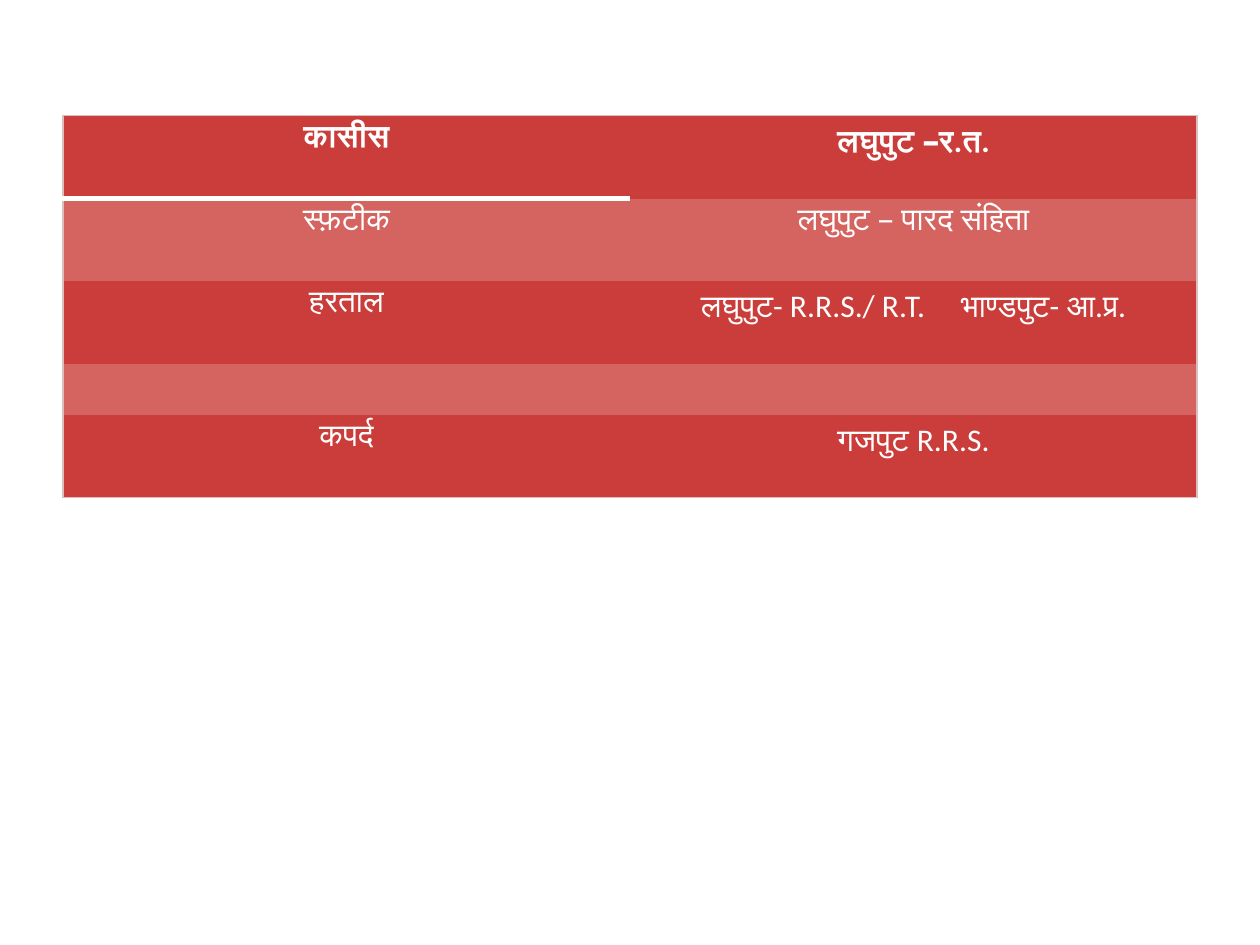
from lxml import etree
from pptx import Presentation
from pptx.dml.color import RGBColor
from pptx.enum import text as t
from pptx.oxml import ns
from pptx.util import Pt

ROWS = [
    (["कासीस"], ["लघुपुट –र.त."]),
    (["स्फ़टीक"], ["लघुपुट – पारद संहिता"]),
    (["हरताल"], ["लघुपुट- R.R.S./ R.T.", "भाण्डपुट- आ.प्र."]),
    ([], []),
    (["कपर्द"], ["गजपुट R.R.S."]),
]
HEX = {"dark": "CB3D3A", "light": "D5635F", "edge": "DEBDBD", "white": "FFFFFF"}
LEFT, TOP, COL = 36, 66.24, 324
TALL, SHORT = 47.2, 29.2
GAP = 16.3
NO_STYLE = "{2D5ABB26-0587-4C30-8999-92F81FD0307C}"


def add_text(para, words, size=18, bold=False, color="white", font="Calibri"):
    """Write the parts in one centred line, parted by a widened space."""
    para.alignment = t.PP_ALIGN.CENTER
    para.font.size = Pt(size)
    for i, word in enumerate(words):
        for part in ([" ", word] if i else [word]):
            run = para.add_run()
            run.text = part
            run.font.name = font
            run.font.size = Pt(size)
            run.font.bold = bold
            run.font.color.rgb = RGBColor.from_string(HEX[color])
            if part == " ":
                run.font._element.set("spc", str(round(GAP * 100)))


def add_edges(cell, edges):
    """Draw cell borders; edges maps L, R, T or B to (colour, width)."""
    props = cell._tc.get_or_add_tcPr()
    sides = [s for s in "LRTB" if s in edges]
    for i, side in enumerate(sides):
        color, width = edges[side]
        line = etree.Element(ns.qn("a:ln" + side), w=str(Pt(width)))
        fill = etree.SubElement(line, ns.qn("a:solidFill"))
        etree.SubElement(fill, ns.qn("a:srgbClr"), val=HEX[color])
        props.insert(i, line)


def main():
    deck = Presentation()
    deck.slide_width, deck.slide_height = Pt(720), Pt(540)
    slide = deck.slides.add_slide(deck.slide_layouts[6])

    highs = [TALL if any(row) else SHORT for row in ROWS]
    frame = slide.shapes.add_table(len(ROWS), 2, Pt(LEFT), Pt(TOP),
                                   Pt(2 * COL), Pt(sum(highs)))
    table = frame.table
    table.first_row = table.horz_banding = False
    table._tbl.tblPr.find(ns.qn("a:tableStyleId")).text = NO_STYLE
    for col in table.columns:
        col.width = Pt(COL)

    thin = ("edge", 0.75)
    last = len(ROWS) - 1
    for r, row in enumerate(ROWS):
        table.rows[r].height = Pt(highs[r])
        for c, words in enumerate(row):
            cell = table.cell(r, c)
            cell.fill.solid()
            shade = HEX["light" if r % 2 else "dark"]
            cell.fill.fore_color.rgb = RGBColor.from_string(shade)
            add_text(cell.text_frame.paragraphs[0], words, bold=r == 0)
            edges = {"R" if c else "L": thin}
            if r == 0:
                edges["T"] = thin
                if c == 0:
                    edges["B"] = ("white", 3)
            if r == last:
                edges["B"] = thin
            add_edges(cell, edges)

    deck.save("out.pptx")


if __name__ == "__main__":
    main()
